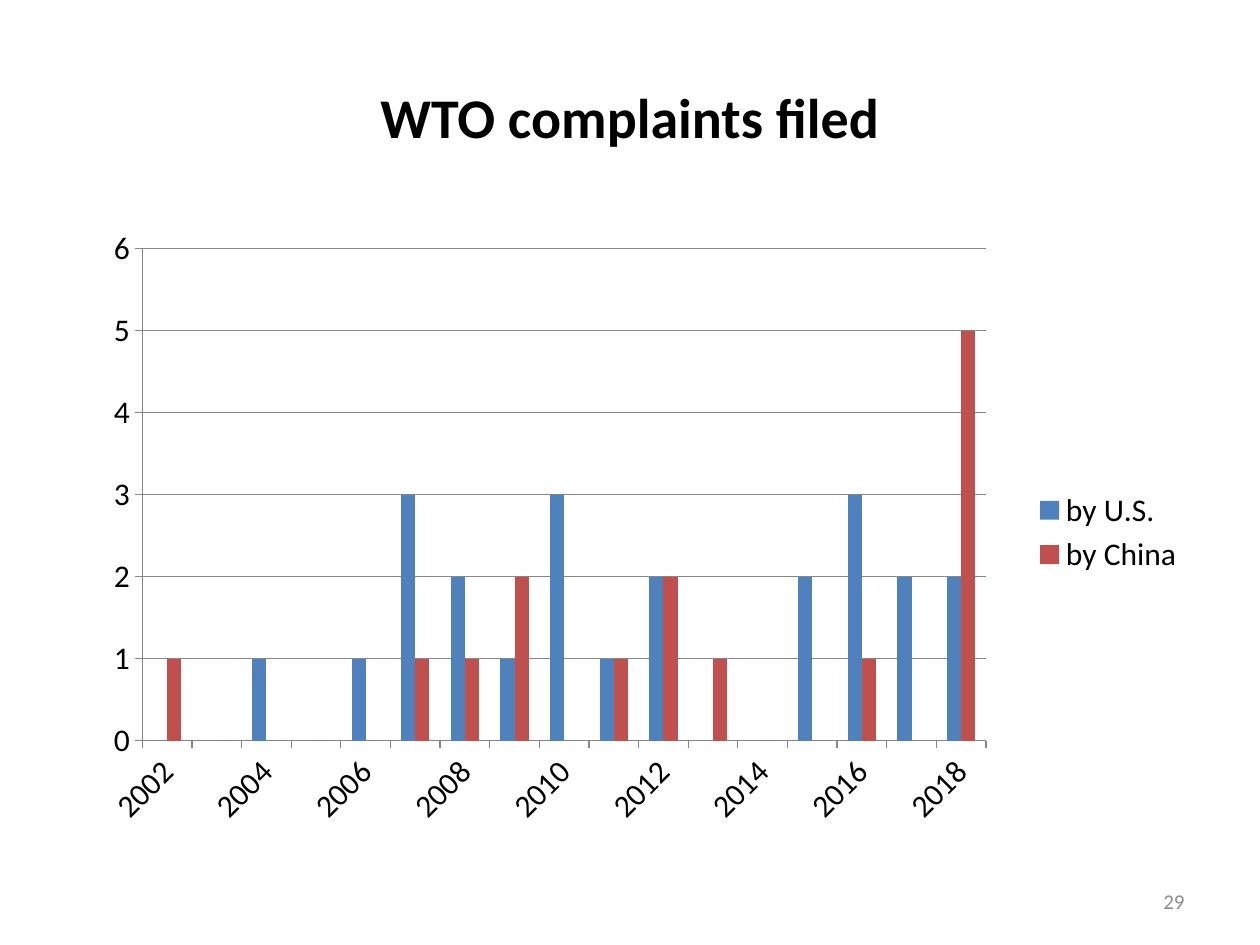
from lxml import etree
from pptx import Presentation
from pptx.chart.data import CategoryChartData
from pptx.dml.color import RGBColor
from pptx.enum.chart import XL_CHART_TYPE, XL_LEGEND_POSITION, XL_TICK_MARK
from pptx.enum.text import MSO_ANCHOR, PP_ALIGN
from pptx.oxml.ns import qn
from pptx.util import Cm, Pt

COLUMNS = XL_CHART_TYPE.COLUMN_CLUSTERED
LEGEND_RIGHT = XL_LEGEND_POSITION.RIGHT
TICK_OUTSIDE = XL_TICK_MARK.OUTSIDE
MIDDLE = MSO_ANCHOR.MIDDLE
CENTER, RIGHT = PP_ALIGN.CENTER, PP_ALIGN.RIGHT

TITLE = "WTO complaints filed"
PAGE_NUMBER = "29"
YEARS = [str(year) for year in range(2002, 2019)]
COMPLAINTS = {
    "by U.S. ": (0, 0, 1, 0, 1, 3, 2, 1, 3, 1, 2, 0, 0, 2, 3, 2, 2),
    "by China": (1, 0, 0, 0, 0, 1, 1, 2, 0, 1, 2, 1, 0, 0, 1, None, 5),
}

THEME = {
    "font": "Calibri",
    "text": RGBColor(0x00, 0x00, 0x00),
    "muted": RGBColor(0x8C, 0x8C, 0x8C),
    "grid": RGBColor(0x86, 0x86, 0x86),
    "series": (RGBColor(0x4F, 0x81, 0xBD), RGBColor(0xC0, 0x50, 0x4D)),
    "title_size": Pt(32),
    "chart_size": Pt(18),
    "number_size": Pt(12),
    "line": Pt(0.75),
}

# Left, top, width, height in centimetres
TITLE_AREA = (1.27, 0.76, 22.86, 3.18)
CHART_AREA = (1.27, 4.45, 22.86, 12.57)
NUMBER_AREA = (18.2, 17.65, 5.93, 1.02)
# Fractions of the chart area
PLOT_LAYOUT = {"x": 0.07, "y": 0.045, "w": 0.744, "h": 0.789}


def style_font(font, size, color, bold=False):
    font.name = THEME["font"]
    font.size = size
    font.bold = bold
    font.color.rgb = color


def add_text(page, text, area, align, size, color, bold=False):
    box = page.shapes.add_textbox(*map(Cm, area))
    frame = box.text_frame
    frame.text = text
    frame.word_wrap = True
    frame.vertical_anchor = MIDDLE
    para = frame.paragraphs[0]
    para.alignment = align
    style_font(para.runs[0].font, size, color, bold)


def place_plot(chart):
    """Fix the inner plot area, which has no public setting."""
    plot_area = chart.element.find(".//" + qn("c:plotArea"))
    for layout in plot_area.findall(qn("c:layout")):
        plot_area.remove(layout)
    layout = etree.Element(qn("c:layout"))
    manual = etree.SubElement(layout, qn("c:manualLayout"))
    settings = {"layoutTarget": "inner", "xMode": "edge", "yMode": "edge", **PLOT_LAYOUT}
    for name, value in settings.items():
        etree.SubElement(manual, qn("c:" + name)).set("val", str(value))
    plot_area.insert(0, layout)


def style_line(line):
    line.color.rgb = THEME["grid"]
    line.width = THEME["line"]


def add_complaints_chart(page):
    chart_data = CategoryChartData()
    chart_data.categories = YEARS
    for name, values in COMPLAINTS.items():
        chart_data.add_series(name, values)
    chart = page.shapes.add_chart(COLUMNS, *map(Cm, CHART_AREA), chart_data).chart
    chart.has_title = False
    style_font(chart.font, THEME["chart_size"], THEME["text"])

    chart.has_legend = True
    chart.legend.position = LEGEND_RIGHT
    chart.legend.include_in_layout = False

    plot = chart.plots[0]
    plot.gap_width = 150
    plot.overlap = 0
    plot.vary_by_categories = False
    for series, color in zip(plot.series, THEME["series"]):
        series.format.fill.solid()
        series.format.fill.fore_color.rgb = color

    for axis in (chart.category_axis, chart.value_axis):
        axis.major_tick_mark = TICK_OUTSIDE
        style_line(axis.format.line)
    chart.value_axis.minimum_scale = 0
    chart.value_axis.maximum_scale = 6
    chart.value_axis.major_unit = 1
    chart.value_axis.has_major_gridlines = True
    style_line(chart.value_axis.major_gridlines.format.line)
    place_plot(chart)


def main():
    deck = Presentation()
    deck.slide_width, deck.slide_height = Cm(25.4), Cm(19.05)
    page = deck.slides.add_slide(deck.slide_layouts[6])
    add_text(page, TITLE, TITLE_AREA, CENTER, THEME["title_size"], THEME["text"], bold=True)
    add_complaints_chart(page)
    add_text(page, PAGE_NUMBER, NUMBER_AREA, RIGHT, THEME["number_size"], THEME["muted"])
    deck.save("out.pptx")


if __name__ == "__main__":
    main()
